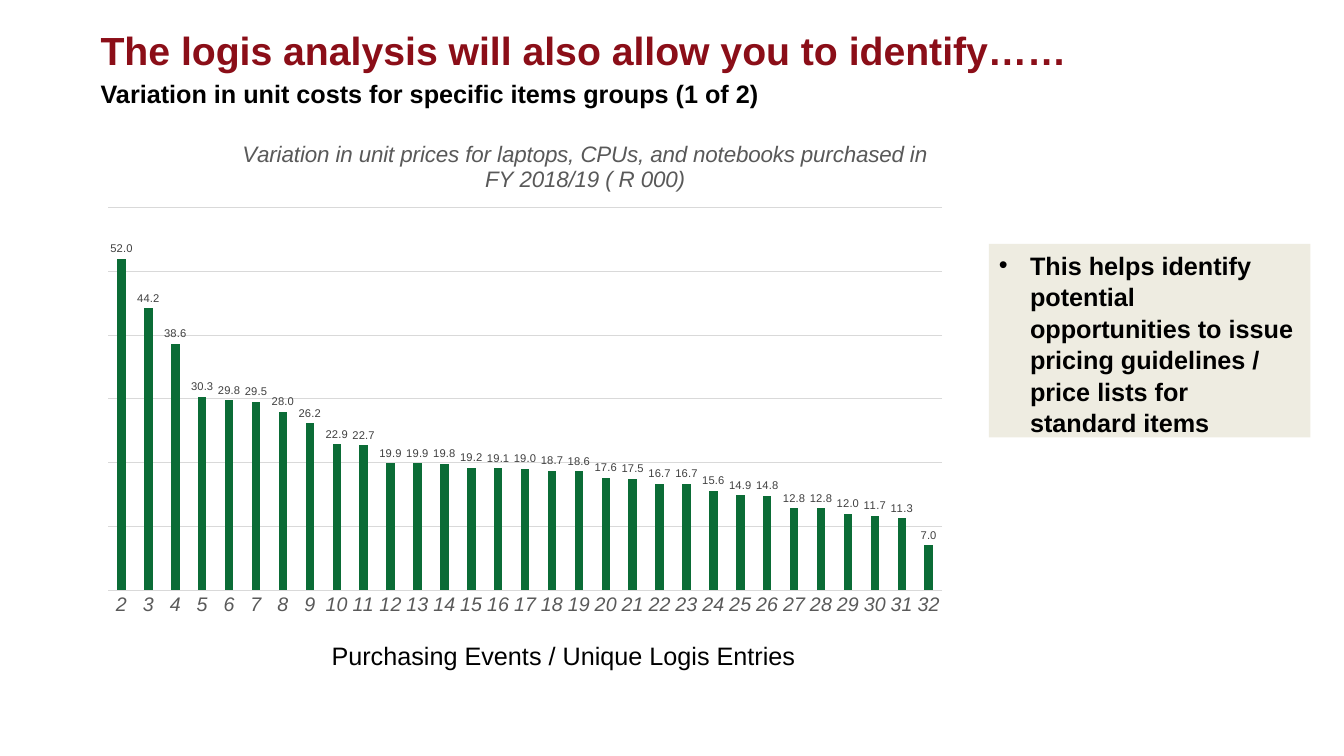
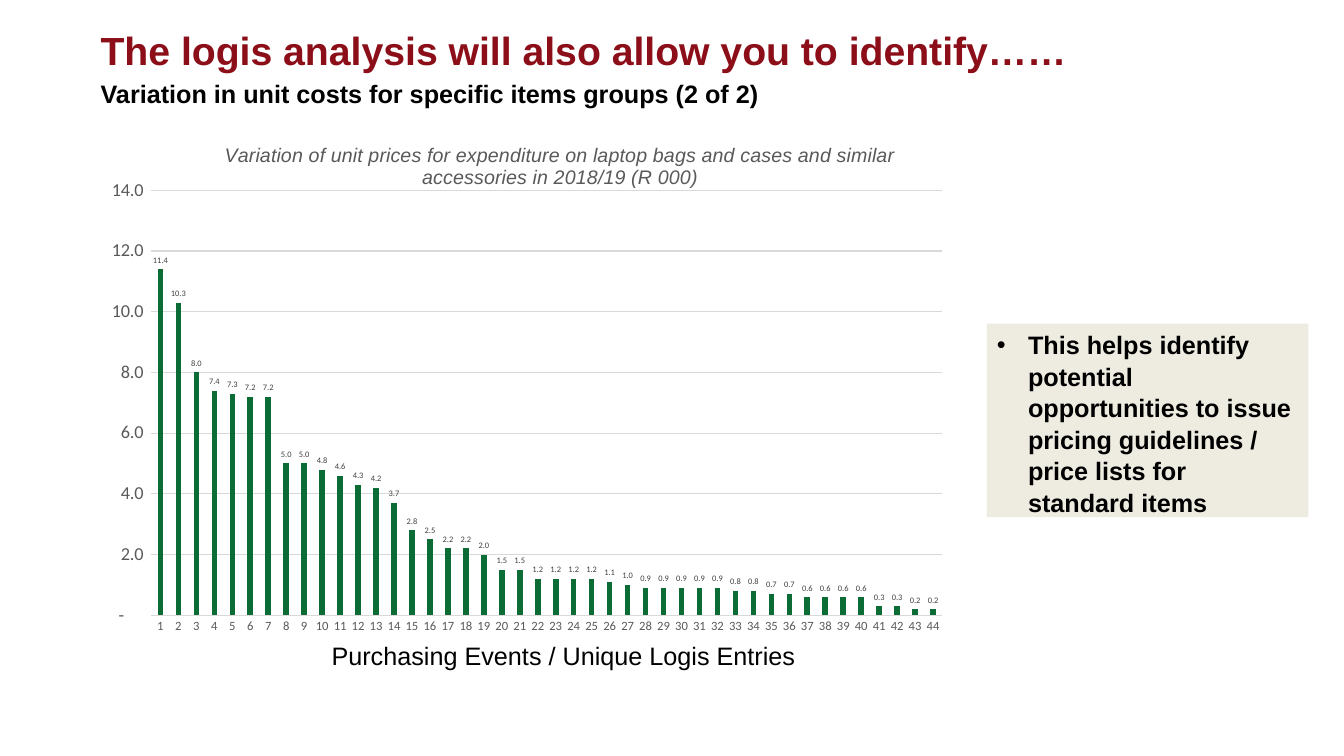
import dataclasses

import lxml.etree
import pptx
import pptx.chart.data
import pptx.dml.color
import pptx.enum.chart
import pptx.enum.shapes
import pptx.enum.text
import pptx.oxml
import pptx.oxml.ns
import pptx.util

COLORS = {
    "title": "8B0E18",
    "text": "000000",
    "note": "EEECE1",
    "bars": "0B6C36",
    "grid": "D9D9D9",
    "axis": "595959",
    "labels": "404040",
}
HEADING = "The logis analysis will also allow you to identify……"
SUBHEADING = "Variation in unit costs for specific items groups ({} of {})"
AXIS_CAPTION = "Purchasing Events / Unique Logis Entries"
NOTE = ("This helps identify potential opportunities to issue "
        "pricing guidelines / price lists for standard items")


@dataclasses.dataclass
class Box:
    left: float
    top: float
    width: float
    height: float

    def region(self, left, top, width, height):
        return Box(self.left + self.width * left / 100,
                   self.top + self.height * top / 100,
                   self.width * width / 100,
                   self.height * height / 100)

    def emu(self):
        return [pptx.util.Inches(length) for length in dataclasses.astuple(self)]


PAGE = Box(0, 0, 13.33, 7.5)


@dataclasses.dataclass
class PriceChart:
    area: Box
    note_area: Box
    title: str
    title_size: float
    title_at: tuple
    plot: tuple
    first_event: int
    prices: list
    top_price: float
    price_step: float
    font: str
    event_size: float
    label_size: float
    event_italic: bool = False
    show_prices: bool = True


SLIDES = [
    PriceChart(
        area=PAGE.region(6.75, 15.33, 64.65, 67.47),
        note_area=PAGE.region(73.58, 32.27, 23.93, 25.6),
        title="Variation in unit prices for laptops, CPUs, and notebooks "
              "purchased in FY 2018/19 ( R 000)",
        title_size=16, title_at=(0.17, 0.04), plot=(0.02, 0.18, 0.96, 0.75),
        first_event=2,
        prices=[52, 44.2, 38.6, 30.3, 29.8, 29.5, 28, 26.2, 22.9, 22.7, 19.9,
                19.9, 19.8, 19.2, 19.1, 19, 18.7, 18.6, 17.6, 17.5, 16.7, 16.7,
                15.6, 14.9, 14.8, 12.8, 12.8, 12, 11.7, 11.3, 7],
        top_price=60, price_step=10, font="Arial", event_size=14, label_size=8,
        event_italic=True, show_prices=False),
    PriceChart(
        area=PAGE.region(6.75, 17.73, 64.65, 67.73),
        note_area=PAGE.region(73.43, 42.8, 23.93, 25.6),
        title="Variation of unit prices for expenditure on laptop bags and cases "
              "and similar accessories in 2018/19 (R 000)",
        title_size=14, title_at=(0.15, 0.01), plot=(0.07, 0.11, 0.91, 0.83),
        first_event=1,
        prices=[11.4, 10.3, 8, 7.4, 7.3, 7.2, 7.2, 5, 5, 4.8, 4.6, 4.3, 4.2, 3.7,
                2.8, 2.5, 2.2, 2.2, 2, 1.5, 1.5, 1.2, 1.2, 1.2, 1.2, 1.1, 1, 0.9,
                0.9, 0.9, 0.9, 0.9, 0.8, 0.8, 0.7, 0.7, 0.6, 0.6, 0.6, 0.6, 0.3,
                0.3, 0.2, 0.2],
        top_price=14, price_step=2, font="Calibri", event_size=9, label_size=6),
]


def rgb(name):
    return pptx.dml.color.RGBColor.from_string(COLORS[name])


def style_font(font, size, color="text", name="Arial", bold=False, italic=False):
    font.size = pptx.util.Pt(size)
    font.name = name
    font.bold = bold
    font.italic = italic
    font.color.rgb = rgb(color)


def add_bullet(paragraph, indent):
    properties = paragraph._p.get_or_add_pPr()
    properties.set("marL", str(pptx.util.Inches(indent)))
    properties.set("indent", str(-pptx.util.Inches(indent)))
    for tag, key, value in (("a:buFont", "typeface", "Arial"), ("a:buChar", "char", "•")):
        bullet = lxml.etree.SubElement(properties, pptx.oxml.ns.qn(tag))
        bullet.set(key, value)


def add_text(slide, box, text, size=18, color="text", bold=False, fill=None,
             bullet=False, middle=False, line_spacing=None):
    if fill:
        holder = slide.shapes.add_shape(
            pptx.enum.shapes.MSO_SHAPE.RECTANGLE, *box.emu())
        holder.shadow.inherit = False
        holder.fill.solid()
        holder.fill.fore_color.rgb = rgb(fill)
        holder.line.fill.background()
    else:
        holder = slide.shapes.add_textbox(*box.emu())
    frame = holder.text_frame
    frame.word_wrap = True
    anchors = pptx.enum.text.MSO_ANCHOR
    frame.vertical_anchor = anchors.MIDDLE if middle else anchors.TOP
    paragraph = frame.paragraphs[0]
    paragraph.alignment = pptx.enum.text.PP_ALIGN.LEFT
    if line_spacing:
        paragraph.line_spacing = line_spacing
    if bullet:
        add_bullet(paragraph, 0.31)
    run = paragraph.add_run()
    run.text = text
    style_font(run.font, size, color, bold=bold)


def set_layout(parent, index, inner=False, **shares):
    for old in parent.findall(pptx.oxml.ns.qn("c:layout")):
        parent.remove(old)
    layout = parent.makeelement(pptx.oxml.ns.qn("c:layout"))
    manual = lxml.etree.SubElement(layout, pptx.oxml.ns.qn("c:manualLayout"))
    settings = {"layoutTarget": "inner"} if inner else {}
    settings.update(xMode="edge", yMode="edge", **shares)
    for tag, value in settings.items():
        lxml.etree.SubElement(manual, pptx.oxml.ns.qn("c:" + tag)).set("val", str(value))
    parent.insert(index, layout)


def add_header(slide, box, number):
    add_text(slide, box.region(6.75, 3.6, 86.33, 6), HEADING,
             size=28, color="title", bold=True, middle=True)
    add_text(slide, box.region(6.75, 9.73, 89.1, 11.07),
             SUBHEADING.format(number, len(SLIDES)), bold=True)


def style_axes(chart, content):
    none = pptx.enum.chart.XL_TICK_MARK.NONE
    events, prices = chart.category_axis, chart.value_axis
    for axis in (events, prices):
        axis.major_tick_mark = axis.minor_tick_mark = none
    events.has_major_gridlines = False
    style_font(events.tick_labels.font, content.event_size, "axis",
               content.font, italic=content.event_italic)
    prices.minimum_scale = 0
    prices.maximum_scale = content.top_price
    prices.major_unit = content.price_step
    prices.has_major_gridlines = True
    for line in (events.format.line, prices.major_gridlines.format.line):
        line.width = pptx.util.Pt(0.75)
        line.color.rgb = rgb("grid")
    prices.format.line.fill.background()
    prices.visible = content.show_prices
    prices.tick_labels.number_format = '_-* #,##0.0_-;\\-* #,##0.0_-;_-* "-"??_-;'
    prices.tick_labels.number_format_is_linked = False
    style_font(prices.tick_labels.font, 13, "axis", content.font)


def add_price_chart(slide, box, content):
    data = pptx.chart.data.CategoryChartData(number_format="#,##0.0")
    last_event = content.first_event + len(content.prices)
    data.categories = [str(event) for event in range(content.first_event, last_event)]
    data.add_series("Series 1", content.prices)
    chart = slide.shapes.add_chart(
        pptx.enum.chart.XL_CHART_TYPE.COLUMN_CLUSTERED, *box.emu(), data).chart
    chart.has_legend = False
    style_font(chart.font, 10, name=content.font)

    chart.has_title = True
    heading = chart.chart_title
    heading.include_in_layout = False
    heading.text_frame.text = content.title
    style_font(heading.text_frame.paragraphs[0].runs[0].font,
               content.title_size, "axis", italic=True)
    set_layout(heading._element, 1, **dict(zip("xy", content.title_at)))
    set_layout(chart._chartSpace.chart.plotArea, 0, inner=True,
               **dict(zip("xywh", content.plot)))
    style_axes(chart, content)

    plot = chart.plots[0]
    plot.vary_by_categories = False
    plot.gap_width = 219
    plot.overlap = -27
    bars = plot.series[0]
    bars.invert_if_negative = False
    bars.format.fill.solid()
    bars.format.fill.fore_color.rgb = rgb("bars")
    plot.has_data_labels = True
    labels = plot.data_labels
    labels.show_value = True
    labels.number_format = "#,##0.0"
    labels.number_format_is_linked = False
    labels.position = pptx.enum.chart.XL_LABEL_POSITION.OUTSIDE_END
    style_font(labels.font, content.label_size, "labels", content.font)


def add_price_slide(deck, number, content):
    slide = deck.slides.add_slide(deck.slide_layouts[6])
    add_header(slide, PAGE, number)
    add_price_chart(slide, content.area, content)
    add_text(slide, PAGE.region(23.93, 84, 37.5, 5.33), AXIS_CAPTION)
    add_text(slide, content.note_area, NOTE, bold=True, fill="note",
             bullet=True, line_spacing=1.04)


def main():
    deck = pptx.Presentation()
    deck.slide_width = pptx.util.Inches(PAGE.width)
    deck.slide_height = pptx.util.Inches(PAGE.height)
    for number, content in enumerate(SLIDES, start=1):
        add_price_slide(deck, number, content)
    deck.save("out.pptx")


if __name__ == "__main__":
    main()
